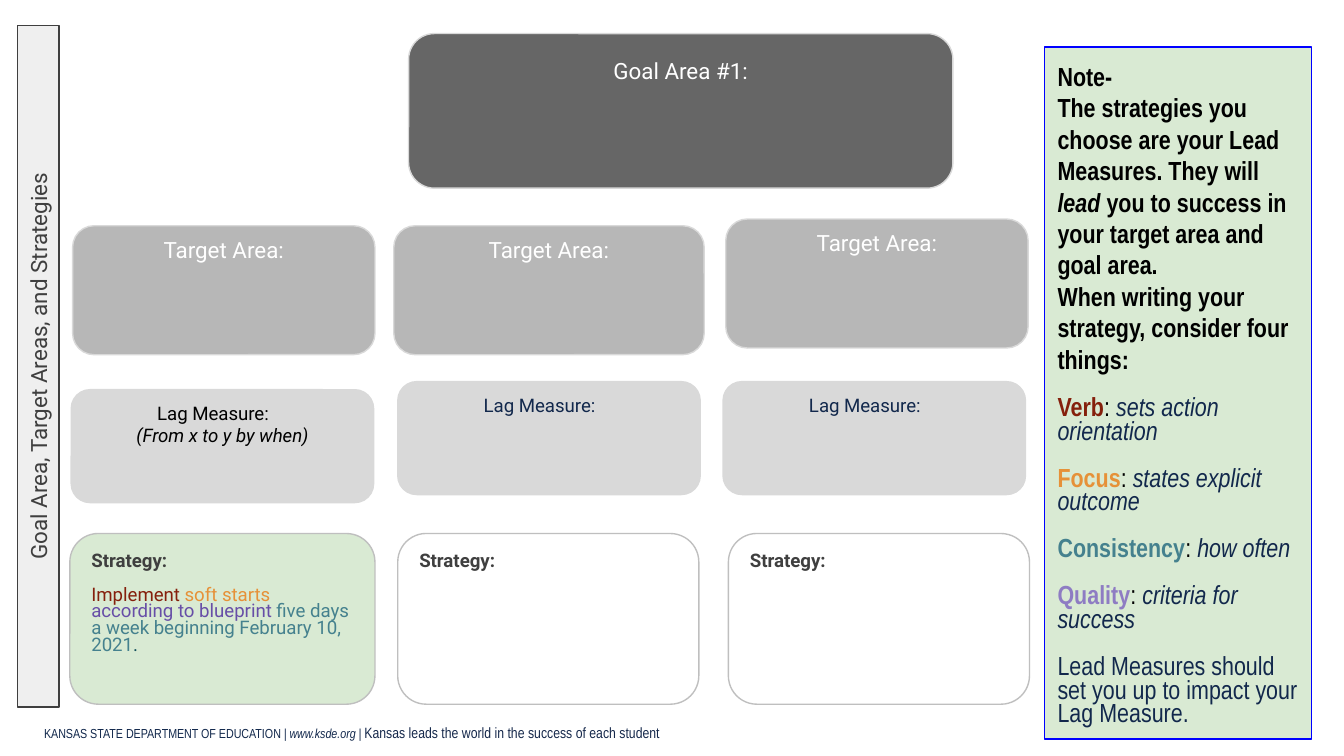
from dataclasses import dataclass
from typing import Optional

from pptx import Presentation
from pptx.dml.color import RGBColor
from pptx.enum.shapes import MSO_SHAPE as Preset
from pptx.enum.text import MSO_ANCHOR as Anchor, MSO_AUTO_SIZE as AutoSize, PP_ALIGN as Align
from pptx.util import Inches, Pt

WHITE = RGBColor(0xFF, 0xFF, 0xFF)
BLACK = RGBColor(0x00, 0x00, 0x00)
NAVY = RGBColor(0x12, 0x28, 0x4C)
FOOTER_NAVY = RGBColor(0x15, 0x28, 0x4B)
CHARCOAL = RGBColor(0x3F, 0x3F, 0x3F)
GOAL_GRAY = RGBColor(0x66, 0x66, 0x66)
TARGET_GRAY = RGBColor(0xB7, 0xB7, 0xB7)
EDGE_GRAY = RGBColor(0xBF, 0xBF, 0xBF)
LIGHT_GRAY = RGBColor(0xD9, 0xD9, 0xD9)
PALE_GRAY = RGBColor(0xEF, 0xEF, 0xEF)
GREEN = RGBColor(0xD9, 0xEA, 0xD3)
BLUE = RGBColor(0x00, 0x00, 0xFF)
RED = RGBColor(0x85, 0x20, 0x0C)
ORANGE = RGBColor(0xE6, 0x91, 0x38)
PURPLE = RGBColor(0x67, 0x4E, 0xA7)
LILAC = RGBColor(0x8E, 0x7C, 0xC3)
TEAL = RGBColor(0x45, 0x81, 0x8E)
DARK_TEAL = RGBColor(0x13, 0x4F, 0x5C)

ROBOTO = "Roboto"
NARROW = "Arial Narrow"


@dataclass
class Span:
    text: str
    color: RGBColor
    bold: bool = False
    italic: bool = False
    size: Optional[float] = None


@dataclass
class Card:
    left: float
    top: float
    width: float
    height: float
    fill: RGBColor
    line: RGBColor
    preset: Preset = Preset.ROUNDED_RECTANGLE


def write(frame, spans: list[Span], *, font: str = ROBOTO, size: float = 10,
          align: Align = Align.LEFT, spacing: float = 1.0, before: float = 0,
          indent: float = 0) -> None:
    para = frame.paragraphs[0]
    if para.runs:
        para = frame.add_paragraph()
    if indent:
        para._p.get_or_add_pPr().set("indent", str(Inches(indent)))
    para.alignment = align
    para.line_spacing = spacing
    para.space_before = Pt(before)
    for span in spans:
        run = para.add_run()
        run.text = span.text
        run.font.name = font
        run.font.size = Pt(span.size or size)
        run.font.bold = span.bold
        run.font.italic = span.italic
        run.font.color.rgb = span.color


def paint(shape, fill: RGBColor, line: RGBColor) -> None:
    shape.fill.solid()
    shape.fill.fore_color.rgb = fill
    shape.line.color.rgb = line
    shape.line.width = Pt(0.75)


def place(shape, left: float, top: float, width: float, height: float) -> None:
    shape.left, shape.top = Inches(left), Inches(top)
    shape.width, shape.height = Inches(width), Inches(height)


def add_card(page, card: Card, inset: float = 0.05):
    box = page.shapes.add_shape(card.preset, 0, 0, 0, 0)
    place(box, card.left, card.top, card.width, card.height)
    box.shadow.inherit = False
    paint(box, card.fill, card.line)
    frame = box.text_frame
    frame.word_wrap = True
    frame.vertical_anchor = Anchor.TOP
    frame.margin_top = Inches(inset)
    return frame


def add_title(page) -> None:
    title = page.shapes.title
    place(title, -2.25, 2.57, 5.07, 0.31)
    title.rotation = 270
    paint(title, PALE_GRAY, CHARCOAL)
    frame = title.text_frame
    frame.auto_size = AutoSize.NONE
    frame.vertical_anchor = Anchor.MIDDLE
    write(frame, [Span("Goal Area, Target Areas, and Strategies", CHARCOAL)],
          size=12, align=Align.CENTER)


def add_footer(page) -> None:
    box = page.shapes.add_textbox(0, 0, 0, 0)
    place(box, 0.23, 5.33, 6.6, 0.24)
    frame = box.text_frame
    frame.word_wrap = True
    frame.vertical_anchor = Anchor.BOTTOM
    write(frame, [
        Span("KANSAS STATE DEPARTMENT OF EDUCATION ", NAVY),
        Span("| www.ksde.org | ", NAVY, italic=True),
        Span("Kansas leads the world in the success of each student", FOOTER_NAVY, size=8),
    ], font=NARROW, size=7)


def add_goal(page) -> None:
    frame = add_card(page, Card(3.04, 0.25, 4.05, 1.15, GOAL_GRAY, LIGHT_GRAY), inset=0.12)
    write(frame, [Span("Goal Area #1:", WHITE)], size=12, align=Align.CENTER)


def add_targets(page) -> None:
    for left, top, width in ((0.54, 1.68, 2.25), (2.93, 1.68, 2.31), (5.4, 1.63, 2.25)):
        frame = add_card(page, Card(left, top, width, 0.96, TARGET_GRAY, LIGHT_GRAY), inset=0.03)
        write(frame, [Span("Target Area:", WHITE)], size=12, align=Align.CENTER)


def add_lags(page) -> None:
    for left, top, color, hint in ((0.53, 2.9, BLACK, "(From x to y by when)"),
                                   (2.96, 2.84, NAVY, ""), (5.38, 2.84, NAVY, "")):
        frame = add_card(page, Card(left, top, 2.25, 0.84, LIGHT_GRAY, LIGHT_GRAY))
        write(frame, [Span("Lag Measure:", color)], indent=0.5)
        if hint:
            write(frame, [Span(hint, color, italic=True)], align=Align.CENTER)


def add_strategies(page) -> None:
    example = [
        Span("Implement ", RED),
        Span("soft starts ", ORANGE),
        Span("according to blueprint ", PURPLE),
        Span("five days a week beginning February 10, 2021", TEAL),
        Span(".", DARK_TEAL),
    ]
    for left, width, fill, spans in ((0.52, 2.27, GREEN, example),
                                     (2.96, 2.24, WHITE, []), (5.42, 2.24, WHITE, [])):
        frame = add_card(page, Card(left, 3.97, width, 1.27, fill, EDGE_GRAY))
        write(frame, [Span("Strategy:", CHARCOAL, bold=True)])
        if spans:
            write(frame, spans, spacing=0.75, before=9)


def add_note(page) -> None:
    frame = add_card(page, Card(7.77, 0.35, 1.99, 5.15, GREEN, BLUE, Preset.RECTANGLE), inset=0.1)
    frame.margin_bottom = Inches(0.1)
    for spans in (
        [Span("Note-", BLACK, bold=True)],
        [Span("The strategies you choose are your Lead Measures. They will ", BLACK, bold=True),
         Span("lead ", BLACK, bold=True, italic=True),
         Span("you to success in your target area and goal area.", BLACK, bold=True)],
        [Span("When writing your strategy, consider four things:", BLACK, bold=True)],
    ):
        write(frame, spans, font=NARROW, size=14)
    terms = (
        ("Verb", RED, "sets action orientation"),
        ("Focus", ORANGE, "states explicit outcome"),
        ("Consistency", TEAL, "how often"),
        ("Quality", LILAC, "criteria for success"),
    )
    lines = [[Span(term, color, bold=True), Span(": ", BLACK), Span(meaning, NAVY, italic=True)]
             for term, color, meaning in terms]
    lines.append([Span("Lead Measures should set you up to impact your Lag Measure.", NAVY)])
    for spans in lines:
        write(frame, spans, font=NARROW, size=14, spacing=0.75, before=12.6)


def main() -> None:
    deck = Presentation()
    deck.slide_width = Inches(10)
    deck.slide_height = deck.slide_width * 9 // 16
    page = deck.slides.add_slide(deck.slide_layouts[5])
    for draw in (add_title, add_footer, add_goal, add_targets, add_lags, add_strategies, add_note):
        draw(page)
    deck.save("out.pptx")


if __name__ == "__main__":
    main()
